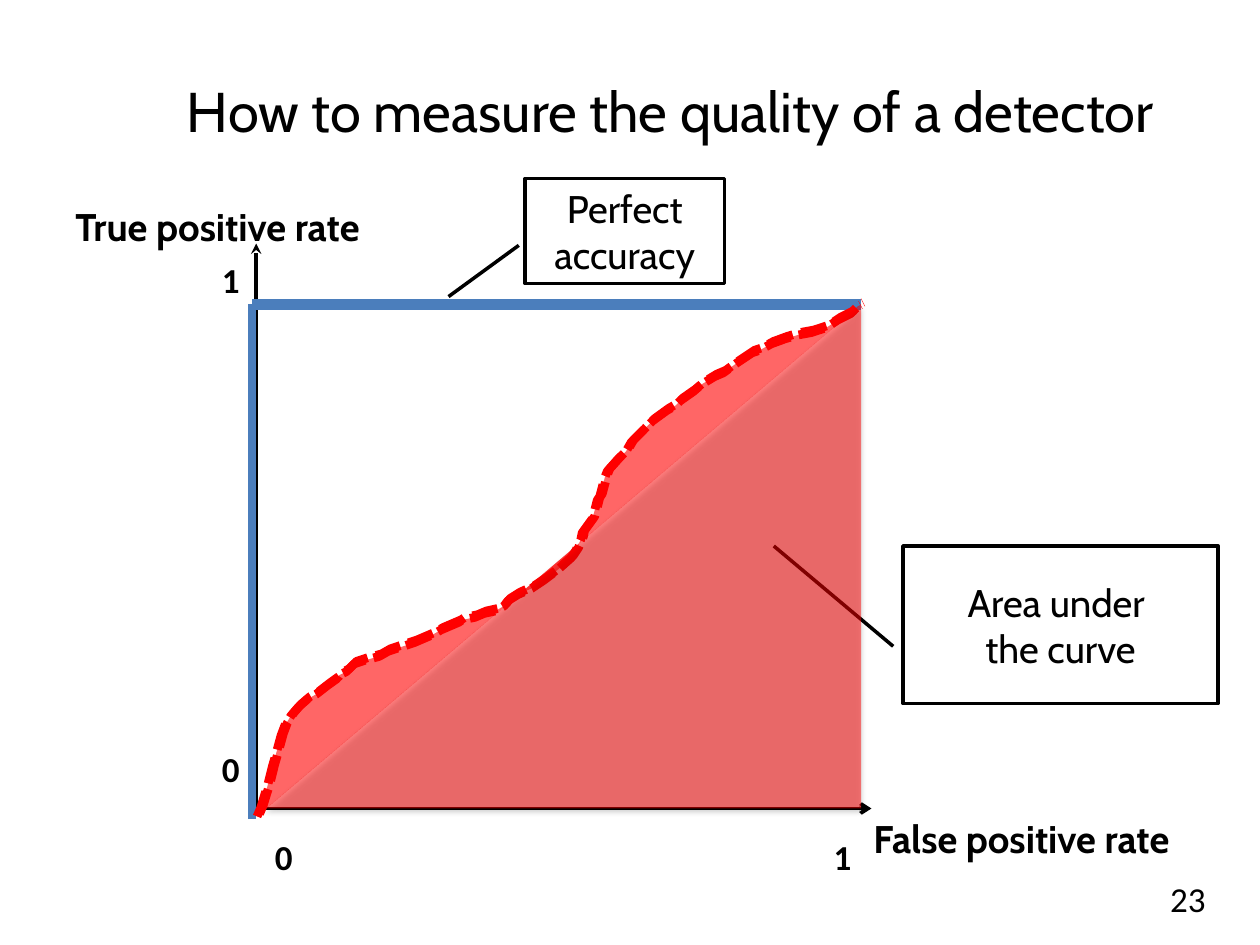
from dataclasses import dataclass

import pptx
import pptx.dml.color
import pptx.enum.dml
import pptx.enum.shapes
import pptx.enum.text
import pptx.oxml
import pptx.oxml.ns
import pptx.util

CELL = pptx.util.Inches(1) // 12
COLUMNS, ROWS = 120, 90
HUNDREDTH = pptx.util.Inches(0.01)
LEFT, RIGHT, TOP, BOTTOM = 24, 82, 29, 77
COLORS = {"ink": "000000", "perfect": "4B7EBC", "curve": "FF0000"}
ALIGN = pptx.enum.text.PP_ALIGN
ANCHOR = pptx.enum.text.MSO_ANCHOR
SHAPE = pptx.enum.shapes.MSO_SHAPE

ROC_POINTS = [
    (204, 648), (207, 641), (210, 631), (212, 625), (214, 617), (216, 609),
    (218, 602), (220, 595), (223, 584), (226, 576), (231, 568), (237, 561),
    (244, 555), (251, 551), (260, 544), (267, 539), (269, 536), (275, 533),
    (281, 527), (290, 524), (301, 521), (308, 517), (317, 514), (329, 510),
    (343, 504), (350, 500), (357, 497), (364, 494), (367, 492), (377, 490),
    (384, 487), (393, 485), (400, 481), (403, 477), (411, 472), (422, 467),
    (431, 461), (443, 452), (453, 443), (457, 437), (461, 428), (462, 423),
    (470, 412), (472, 405), (474, 397), (476, 394), (480, 379), (482, 374),
    (490, 365), (497, 358), (501, 351), (509, 343), (518, 334), (529, 326),
    (536, 322), (540, 318), (550, 311), (557, 305), (567, 299), (574, 296),
    (585, 288), (597, 280), (603, 278), (612, 273), (623, 269), (633, 266),
    (644, 264), (656, 260), (665, 254), (675, 249), (681, 243), (683, 242),
]


@dataclass
class Label:
    text: str
    column: float
    row: float
    columns: float
    rows: float
    size: int
    font: str = "Cabin"
    bold: bool = False
    align: ALIGN = ALIGN.LEFT
    anchor: ANCHOR = ANCHOR.TOP
    wrap: bool = True
    gap: float = 0


@dataclass
class Segment:
    start: tuple
    end: tuple
    color: str
    width: float
    ending: str = ""
    style: str = ""


@dataclass
class Callout:
    label: Label
    pointer: tuple


LABELS = [
    Label("How to measure the quality of a detector", 12.75, 4, 102.25, 13, 32,
          align=ALIGN.CENTER, anchor=ANCHOR.MIDDLE),
    Label("23", 88, 83.2, 28, 4.8, 20, "Calibri",
          align=ALIGN.RIGHT, anchor=ANCHOR.MIDDLE),
    Label("True positive rate", 6, 18.7, 35.3, 5.6, 22, bold=True, wrap=False),
    Label("1\n0", 15.5, 24, 8.5, 53.8, 20, "Calibri", True, ALIGN.RIGHT, gap=255.6),
    Label("False positive rate", RIGHT, BOTTOM, 36.4, 5.6, 22, bold=True, wrap=False),
]
TICKS = Label("0\t1", 25, 79, 68, 5.3, 20, "Calibri", True)
SEGMENTS = [
    Segment((24.4, 23.2), (24.4, BOTTOM), "ink", 2, "headEnd", "stealth"),
    Segment((LEFT, BOTTOM), (83, BOTTOM), "ink", 2, "tailEnd", "arrow"),
    Segment((LEFT, 78), (LEFT, TOP), "perfect", 5),
    Segment((LEFT, TOP), (RIGHT, TOP), "perfect", 6),
]
CENTERED = {"align": ALIGN.CENTER, "anchor": ANCHOR.MIDDLE}
CALLOUTS = [
    Callout(Label("Perfect accuracy", 50, 17, 19, 10, 22, **CENTERED),
            (0.637, -0.031, 1.125, -0.383)),
    Callout(Label("Area under \vthe curve", 86, 52, 30, 15, 22, **CENTERED),
            (0.637, -0.031, 0, -0.41)),
]


def color(name: str) -> pptx.dml.color.RGBColor:
    return pptx.dml.color.RGBColor.from_string(COLORS[name])


def grid(*cells: float) -> list[int]:
    return [round(cell * CELL) for cell in cells]


def element(tag: str, attributes: str, content: str = ""):
    namespace = pptx.oxml.ns.nsdecls("a")
    return pptx.oxml.parse_xml(f"<a:{tag} {namespace} {attributes}>{content}</a:{tag}>")


def set_line(line, name: str, width: float) -> None:
    line.color.rgb = color(name)
    line.width = pptx.util.Pt(width)


def fill_translucent(shape, percent: int) -> None:
    shape.fill.solid()
    shape.fill.fore_color.rgb = color("curve")
    tint = shape.element.spPr.find(".//" + pptx.oxml.ns.qn("a:srgbClr"))
    tint.append(element("alpha", f'val="{percent * 1000}"'))


def write_text(box, label: Label) -> None:
    frame = box.text_frame
    frame.text = label.text
    frame.word_wrap = label.wrap
    frame.vertical_anchor = label.anchor
    for index, para in enumerate(frame.paragraphs):
        para.alignment = label.align
        para.space_before = pptx.util.Pt(label.gap if index else 0)
        para.font.name = label.font
        para.font.size = pptx.util.Pt(label.size)
        para.font.bold = label.bold
        para.font.color.rgb = color("ink")


def add_label(page, label: Label):
    box = page.shapes.add_textbox(
        *grid(label.column, label.row, label.columns, label.rows))
    write_text(box, label)
    return box


def add_segment(page, segment: Segment) -> None:
    connector = page.shapes.add_connector(
        pptx.enum.shapes.MSO_CONNECTOR.STRAIGHT, *grid(*segment.start, *segment.end))
    set_line(connector.line, segment.color, segment.width)
    properties = connector.element.spPr
    if segment.ending:
        outline = properties.find(pptx.oxml.ns.qn("a:ln"))
        outline.append(element(segment.ending, f'type="{segment.style}"'))
    properties.append(element("effectLst", ""))


def add_callout(page, callout: Callout) -> None:
    label = callout.label
    box = page.shapes.add_shape(
        SHAPE.LINE_CALLOUT_1, *grid(label.column, label.row, label.columns, label.rows))
    for index, share in enumerate(callout.pointer):
        box.adjustments[index] = share
    box.shadow.inherit = False
    box.fill.background()
    set_line(box.line, "ink", 2)
    write_text(box, label)


def add_curve(page, shift: int, opacity: int) -> None:
    points = [(x + shift, y - shift) for x, y in ROC_POINTS]
    builder = page.shapes.build_freeform(*points[0], scale=HUNDREDTH)
    builder.add_line_segments(points[1:], close=False)
    curve = builder.convert_to_shape()
    curve.shadow.inherit = False
    if opacity:
        fill_translucent(curve, opacity)
    else:
        curve.fill.background()
    set_line(curve.line, "curve", 5)
    curve.line.dash_style = pptx.enum.dml.MSO_LINE.SQUARE_DOT


def add_area(page) -> None:
    width, height = 56.64, BOTTOM - TOP
    center_column, center_row = RIGHT - width / 2, (TOP + BOTTOM) / 2
    area = page.shapes.add_shape(
        SHAPE.RIGHT_TRIANGLE,
        *grid(center_column - height / 2, center_row - width / 2, height, width))
    area.rotation = 270
    area.shadow.inherit = False
    fill_translucent(area, 50)
    area.line.fill.background()
    shade = f'<a:srgbClr val="{COLORS["ink"]}"><a:alpha val="35000"/></a:srgbClr>'
    area.element.spPr.find(pptx.oxml.ns.qn("a:effectLst")).append(element(
        "outerShdw", 'blurRad="39370" dist="22860" dir="5400000" rotWithShape="0"', shade))


def main() -> None:
    deck = pptx.Presentation()
    deck.slide_width, deck.slide_height = grid(COLUMNS, ROWS)
    page = deck.slides.add_slide(deck.slide_layouts[6])
    for label in LABELS:
        add_label(page, label)
    ticks = add_label(page, TICKS).text_frame.paragraphs[0]
    stop = f'<a:tab pos="{grid(53.2)[0]}" algn="l"/>'
    properties = ticks._p.get_or_add_pPr()
    properties.insert_element_before(element("tabLst", "", stop), "a:defRPr", "a:extLst")
    for segment in SEGMENTS:
        add_segment(page, segment)
    for callout in CALLOUTS:
        add_callout(page, callout)
    add_curve(page, 2, 0)
    add_curve(page, 0, 60)
    add_area(page)
    deck.save("out.pptx")


if __name__ == "__main__":
    main()
